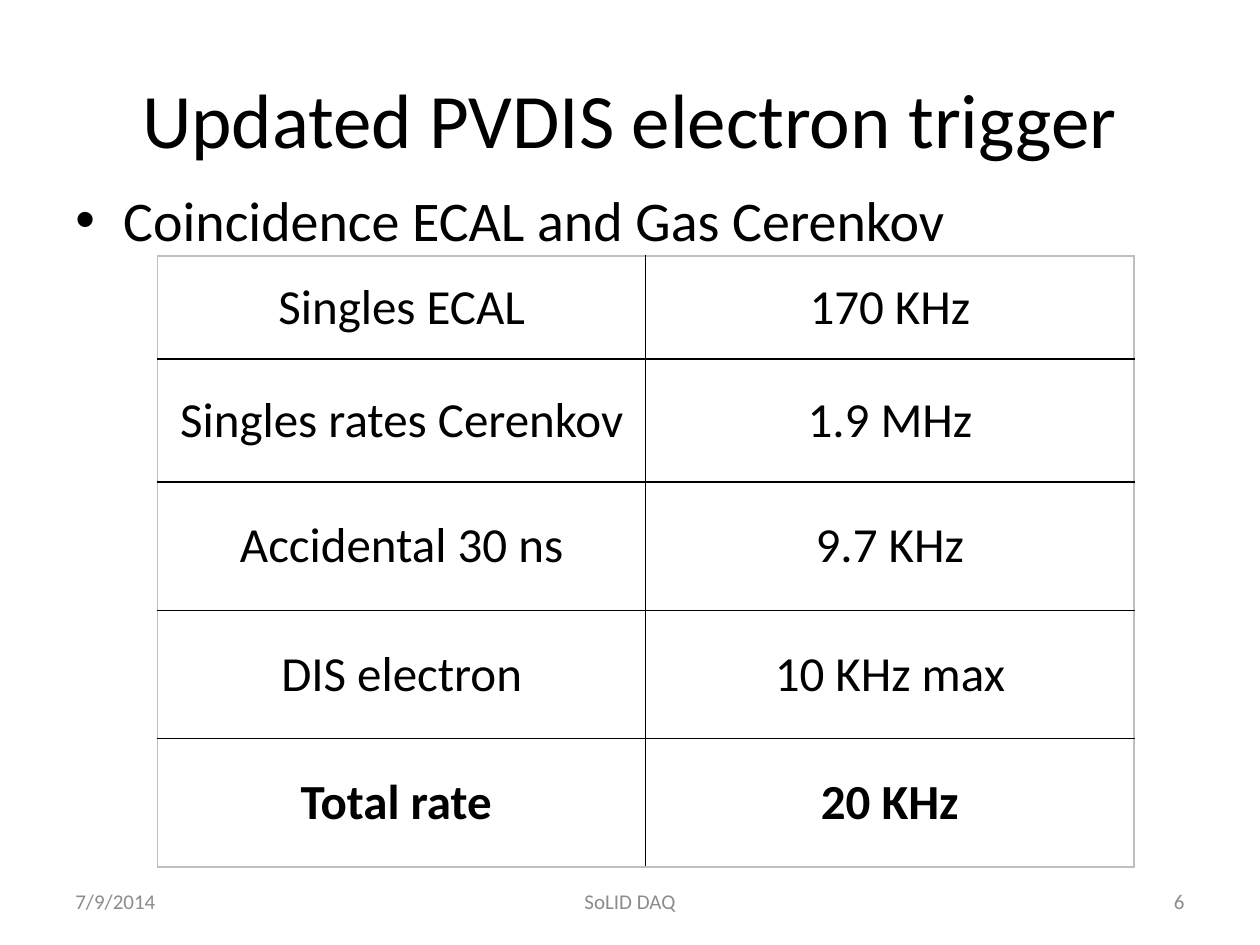
import dataclasses

import lxml.etree
import pptx
import pptx.dml.color
import pptx.enum.text
import pptx.oxml.ns
import pptx.util

ALIGN = pptx.enum.text.PP_ALIGN
ANCHOR = pptx.enum.text.MSO_ANCHOR
WIDE, HIGH = pptx.util.Inches(10), pptx.util.Inches(7.5)


@dataclasses.dataclass(frozen=True)
class Theme:
    font: str = "Calibri"
    ink: str = "000000"
    grey: str = "8C8C8C"
    edge: str = "BFBFBF"
    title: int = 44
    body: int = 32
    cell: int = 28
    foot: int = 12
    rule: float = 1


@dataclasses.dataclass(frozen=True)
class Box:
    x: float
    y: float
    w: float
    h: float

    def slot(self, x, w):
        return Box(self.x + x * self.w, self.y, w * self.w, self.h)

    def place(self):
        return (round(self.x * WIDE), round(self.y * HIGH),
                round(self.w * WIDE), round(self.h * HIGH))


THEME = Theme()
ROWS = [
    ("Singles ECAL", "170 KHz"),
    ("Singles rates Cerenkov", "1.9 MHz"),
    ("Accidental 30 ns", "9.7 KHz"),
    ("DIS electron", "10 KHz max"),
    ("Total rate ", "20 KHz"),
]
SHARES = [0.82, 0.98, 1.02, 1.02, 1.02]


def write(para, text, size, color=THEME.ink, align=ALIGN.LEFT, bold=False):
    para.text = text
    para.alignment = align
    font = para.font
    font.name, font.size, font.bold = THEME.font, pptx.util.Pt(size), bold
    font.color.rgb = pptx.dml.color.RGBColor.from_string(color)


def label(slide, box, text, size, anchor=ANCHOR.MIDDLE, **style):
    frame = slide.shapes.add_textbox(*box.place()).text_frame
    frame.word_wrap = True
    frame.vertical_anchor = anchor
    para = frame.paragraphs[0]
    write(para, text, size, **style)
    return para


def node(root, tag, **attrs):
    return lxml.etree.SubElement(root, pptx.oxml.ns.qn(tag), **attrs)


def heading(slide, box):
    label(slide, box, "Updated PVDIS electron trigger", THEME.title,
          align=ALIGN.CENTER)


def points(slide, box):
    para = label(slide, box, "Coincidence ECAL and Gas Cerenkov", THEME.body,
                 anchor=ANCHOR.TOP)
    props = para._p.get_or_add_pPr()
    indent = pptx.util.Inches(0.38)
    props.set("marL", str(indent))
    props.set("indent", str(-indent))
    font = node(props, "a:buFont", typeface="Arial")
    mark = node(props, "a:buChar", char="•")
    props.insert(0, font)
    props.insert(1, mark)


def border(cell, outer):
    props = cell._tc.get_or_add_tcPr()
    for spot, side in enumerate("LRTB"):
        line = node(props, f"a:ln{side}", w=str(pptx.util.Pt(THEME.rule)))
        fill = node(line, "a:solidFill")
        node(fill, "a:srgbClr", val=THEME.edge if side in outer else THEME.ink)
        props.insert(spot, line)


def rates(slide, box):
    count, wide = len(ROWS), len(ROWS[0])
    table = slide.shapes.add_table(count, wide, *box.place()).table
    table.first_row = table.horz_banding = False
    for r, (texts, share) in enumerate(zip(ROWS, SHARES)):
        table.rows[r].height = round(box.h * HIGH * share / sum(SHARES))
        for c, text in enumerate(texts):
            cell = table.cell(r, c)
            cell.fill.background()
            cell.vertical_anchor = ANCHOR.MIDDLE
            write(cell.text_frame.paragraphs[0], text, THEME.cell,
                  align=ALIGN.CENTER, bold=r == count - 1)
            edges = {"L": c == 0, "R": c == wide - 1,
                     "T": r == 0, "B": r == count - 1}
            border(cell, [side for side, on in edges.items() if on])


def footer(slide, box):
    side, mid = 0.26, 0.35
    slots = [
        (0, side, "7/9/2014", ALIGN.LEFT),
        ((1 - mid) / 2, mid, "SoLID DAQ", ALIGN.CENTER),
        (1 - side, side, "6", ALIGN.RIGHT),
    ]
    for x, w, text, align in slots:
        label(slide, box.slot(x, w), text, THEME.foot,
              color=THEME.grey, align=align)


def main():
    deck = pptx.Presentation()
    deck.slide_width, deck.slide_height = WIDE, HIGH
    slide = deck.slides.add_slide(deck.slide_layouts[6])
    heading(slide, Box(0.05, 0.04, 0.9, 0.17))
    points(slide, Box(0.05, 0.19, 0.9, 0.66))
    footer(slide, Box(0.05, 6.95 / 7.5, 0.9, 0.4 / 7.5))
    rates(slide, Box(0.125, 2.03 / 7.5, 0.775, 4.85 / 7.5))
    deck.save("out.pptx")


if __name__ == "__main__":
    main()
